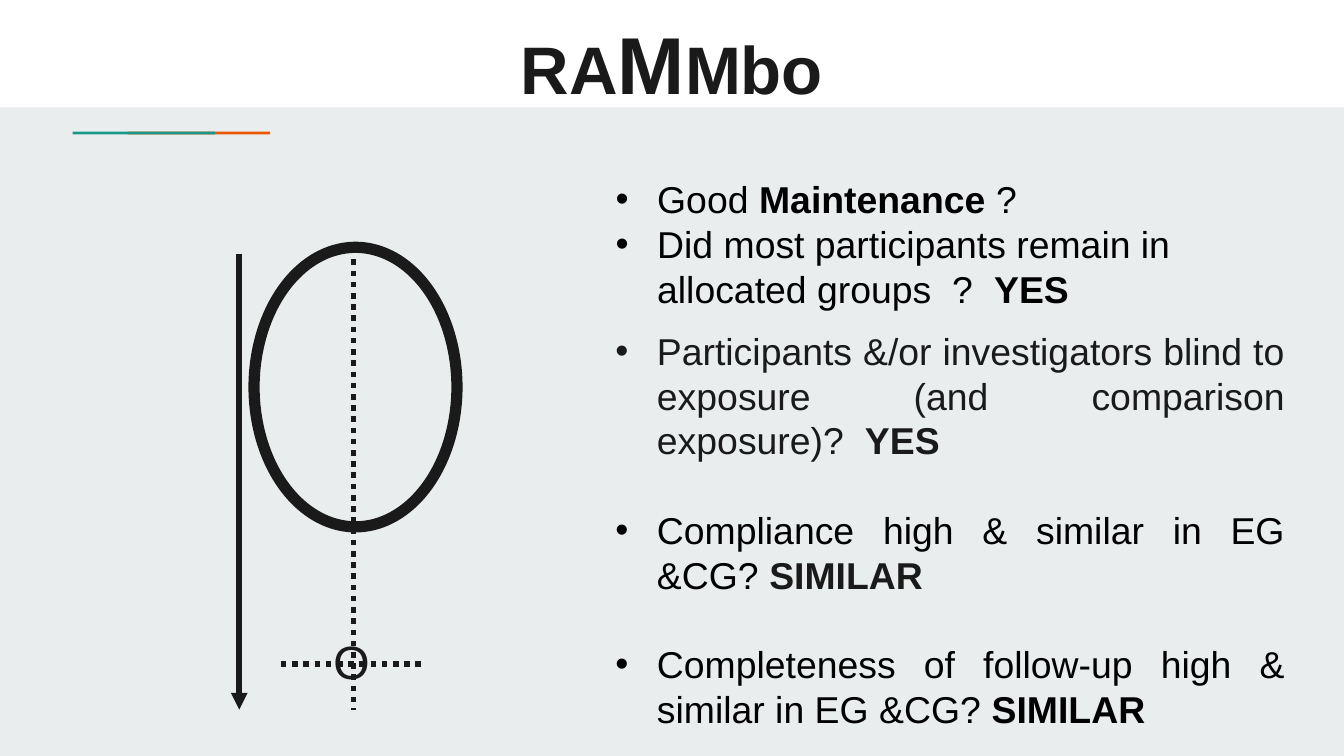
from lxml import etree
from pptx import Presentation, util as u
from pptx.dml.color import RGBColor
from pptx.enum import dml, shapes, text
from pptx.oxml.ns import qn

# Content: runs are (text, format); a paragraph is a list of runs
BOLD = {"bold": True}
DARK = {"color": "ink"}
TITLE = [[("RA", {}), ("M", {"size": "big"}), ("Mbo", {})]]
GROUPS = [
    [("Good ", {}), ("Maintenance ", BOLD), ("?", {})],
    [("Did most participants remain in allocated groups  ?  ", {}), ("YES", BOLD)],
]
CHECKS = [
    [("Participants &/or investigators blind to exposure (and comparison exposure)?  ", DARK),
     ("YES", BOLD | DARK)],
    [("Compliance high & similar in EG &CG? ", {}), ("SIMILAR", BOLD | DARK)],
    [("Completeness of follow-up high & similar in EG &CG? ", {}), ("SIMILAR", BOLD)],
]
BARS = [(0.95, "orange"), (0.54, "teal")]
# Start, end, dash, arrowhead
LINES = [
    ((1.78, 1.89), (1.78, 5.28), False, True),
    ((2.63, 1.93), (2.63, 5.28), True, False),
    ((2.09, 4.94), (3.13, 4.94), True, False),
]

THEME = {
    "font": "Arial",
    "color": {"back": "E9EDEE", "white": "FFFFFF", "ink": "1A1A1A", "black": "000000",
              "orange": "EB5600", "teal": "1A9988"},
    "size": {"title": 36, "big": 43.2, "body": 20, "mark": 25},
    "lead": 24,
}


def tint(name):
    return RGBColor.from_string(THEME["color"][name])


def draw(kind, box, fill=None, line=None, width=1):
    item = slide.shapes.add_shape(kind, *map(u.Inches, box))
    item.shadow.inherit = False
    if fill:
        item.fill.solid()
        item.fill.fore_color.rgb = tint(fill)
    else:
        item.fill.background()
    if line:
        item.line.color.rgb = tint(line)
        item.line.width = u.Pt(width)
    else:
        item.line.fill.background()


def link(start, end, dash, arrow):
    item = slide.shapes.add_connector(
        shapes.MSO_CONNECTOR.STRAIGHT, *map(u.Inches, start + end))
    item.line.color.rgb = tint("ink")
    item.line.width = u.Pt(3)
    if dash:
        item.line.dash_style = dml.MSO_LINE.ROUND_DOT
    if arrow:
        etree.SubElement(item.line._get_or_add_ln(), qn("a:tailEnd"), type="triangle")
    etree.SubElement(item._element.spPr, qn("a:effectLst"))


def bullet(para):
    props = para._p.get_or_add_pPr()
    props.set("marL", str(u.Inches(0.31)))
    props.set("indent", str(-u.Inches(0.31)))
    etree.SubElement(props, qn("a:buFont"), typeface=THEME["font"])
    etree.SubElement(props, qn("a:buChar"), char="•")


def write(paras, box, size="body", color="black", bold=False, align="LEFT",
          anchor="TOP", pad=(0.08, 0.04), wrap=True, dots=False, gap=0):
    frame = slide.shapes.add_textbox(*map(u.Inches, box)).text_frame
    frame.word_wrap = wrap
    frame.vertical_anchor = getattr(text.MSO_ANCHOR, anchor)
    frame.margin_left = frame.margin_right = u.Inches(pad[0])
    frame.margin_top = frame.margin_bottom = u.Inches(pad[1])
    for num, runs in enumerate(paras):
        para = frame.add_paragraph() if num else frame.paragraphs[0]
        para.alignment = getattr(text.PP_ALIGN, align)
        if dots:
            para.line_spacing = u.Pt(THEME["lead"])
            para.space_before = u.Pt(gap if num else 0)
            bullet(para)
        for words, form in runs:
            run = para.add_run()
            run.text = words
            font = run.font
            font.name = THEME["font"]
            font.size = u.Pt(THEME["size"][form.get("size", size)])
            font.bold = form.get("bold", bold)
            font.color.rgb = tint(form.get("color", color))


# Widescreen page, 16 to 9
deck = Presentation()
deck.slide_width = u.Inches(10)
deck.slide_height = deck.slide_width * 9 // 16
slide = deck.slides.add_slide(deck.slide_layouts[6])
slide.background.fill.solid()
slide.background.fill.fore_color.rgb = tint("back")

# Header band, accent bars and title
RECT = shapes.MSO_SHAPE.RECTANGLE
draw(RECT, (0, 0, 10, 0.8), fill="white")
for left, hue in BARS:
    draw(RECT, (left, 0.98, 1.06, 0.02), fill=hue)
write(TITLE, (0.8, 0.02, 8.4, 0.9), size="title", color="ink", bold=True,
      align="CENTER", anchor="BOTTOM", pad=(0.1, 0.1))

# Study diagram
draw(shapes.MSO_SHAPE.OVAL, (1.89, 1.84, 1.51, 2.08), line="ink", width=6)
for ends in LINES:
    link(*ends)
write([[("O", {})]], (2.4, 4.67, 0.39, 0.5), size="mark", color="ink", wrap=False)

# Questions
write(GROUPS, (4.5, 1.27, 4.78, 1.09), dots=True)
write(CHECKS, (4.48, 2.39, 5.18, 3.1), align="JUSTIFY", pad=(0.1, 0.05),
      dots=True, gap=THEME["lead"])

deck.save("out.pptx")
